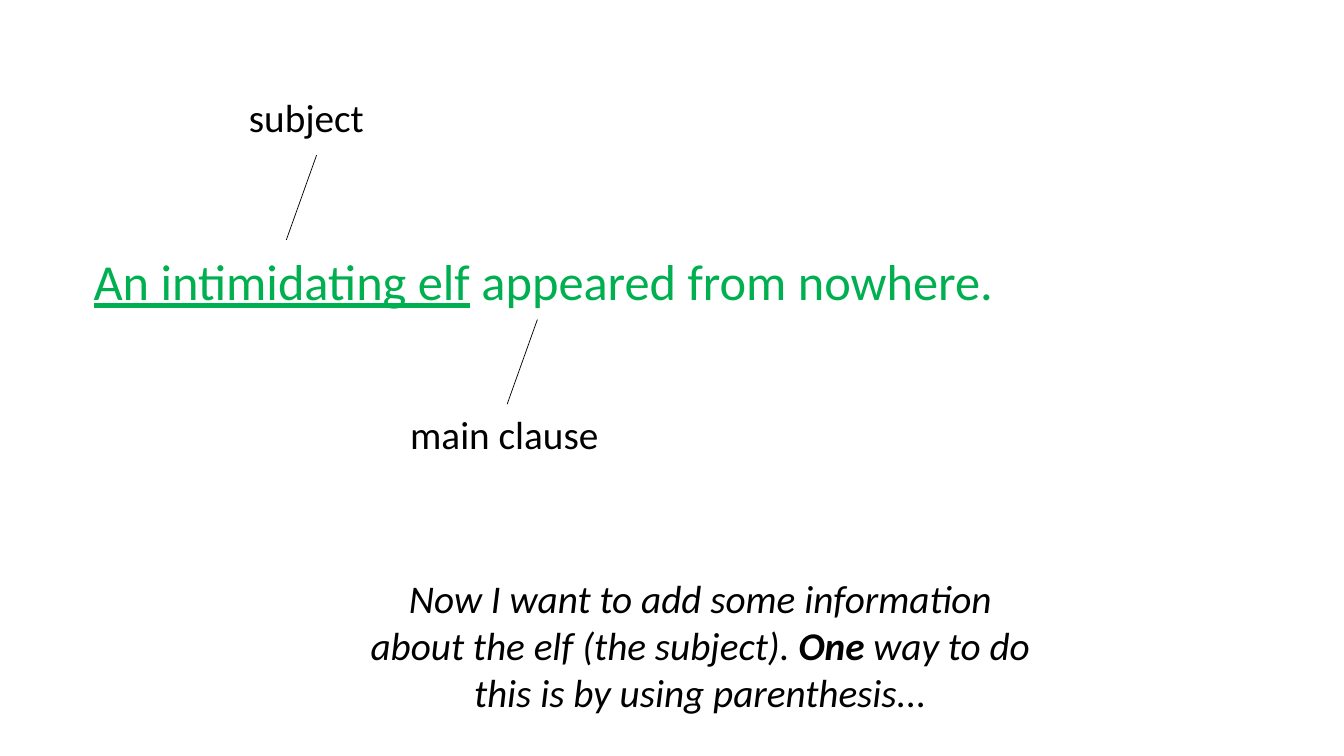
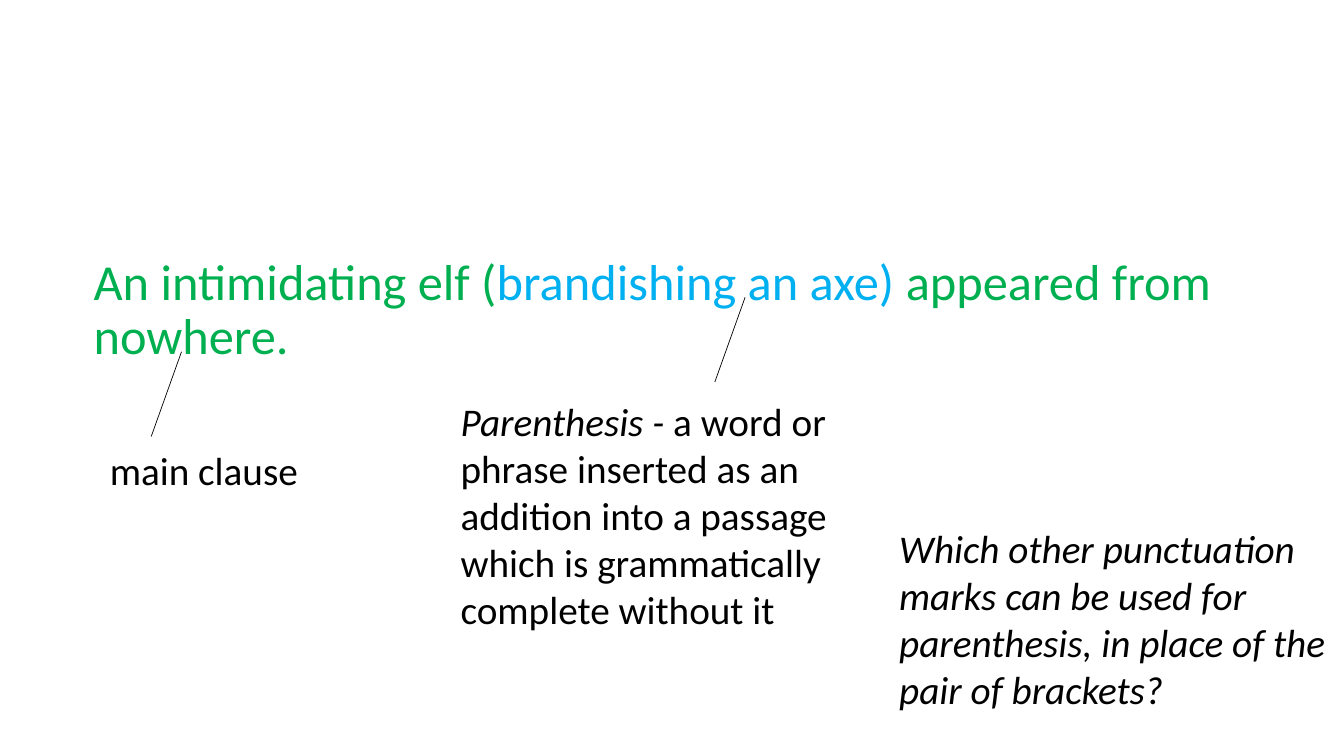
from pptx import Presentation
from pptx.dml.color import RGBColor
from pptx.enum.shapes import MSO_CONNECTOR
from pptx.enum.text import PP_ALIGN
from pptx.oxml.ns import qn
from pptx.util import Pt
from lxml.etree import SubElement

PX = 9144  # EMU per px, 100 px to the inch
FONT = "Calibri"
BLACK = RGBColor(0x00, 0x00, 0x00)
GREEN = RGBColor(0x00, 0xB0, 0x50)
BLUE = RGBColor(0x00, 0xB0, 0xF0)

SENTENCE_BOX = (83, 250, 1150, 295)
POINTER_RUN, POINTER_RISE = 30, 84


def add_text(s, box, runs, size=28, color=BLACK, italic=None, align=PP_ALIGN.LEFT):
    """Place one paragraph; runs are (text, font settings) pairs."""
    tb = s.shapes.add_textbox(*(v * PX for v in box))
    tf = tb.text_frame
    tf.word_wrap = True
    p = tf.paragraphs[0]
    p.alignment = align
    p.font.name, p.font.size, p.font.italic = FONT, Pt(size), italic
    p.font.color.rgb = color
    for text, settings in runs:
        r = p.add_run()
        r.text = text
        for name, value in settings.items():
            if name == "color":
                r.font.color.rgb = value
            else:
                setattr(r.font, name, value)
    return p


def add_sentence(s, runs):
    """The large green example sentence."""
    p = add_text(s, SENTENCE_BOX, runs, size=36, color=GREEN)
    p.line_spacing = 0.9


def add_pointer(s, x, y):
    """Thin slanted line rising to the right from its lower end."""
    line = s.shapes.add_connector(
        MSO_CONNECTOR.STRAIGHT, x * PX, y * PX,
        (x + POINTER_RUN) * PX, (y - POINTER_RISE) * PX)
    line.line.color.rgb = BLACK
    line.line.width = Pt(0.5)
    SubElement(line._element.spPr, qn("a:effectLst"))


def build_clause_slide(s):
    # Sentence with its subject underlined
    add_sentence(s, [("An intimidating elf", {"underline": True}),
                     (" appeared from nowhere.", {})])
    # Labels and pointers
    add_text(s, (237, 88, 249, 57), [("subject", {})])
    add_pointer(s, 284, 238)
    add_text(s, (397, 402, 249, 57), [("main clause", {})])
    add_pointer(s, 503, 401)
    # Lead-in to parenthesis
    add_text(s, (351, 565, 687, 151),
             [("Now I want to add some information about the elf (the subject). ", {}),
              ("One", {"bold": True}),
              (" way to do this is by using parenthesis...", {})],
             italic=True, align=PP_ALIGN.CENTER)


def build_parenthesis_slide(s):
    # Sentence with the parenthesis in blue
    add_sentence(s, [("An intimidating elf (", {}),
                     ("brandishing an axe)", {"color": BLUE}),
                     (" appeared from nowhere.", {})])
    # Labels and pointers
    add_text(s, (99, 438, 218, 57), [("main clause", {})])
    add_pointer(s, 150, 433)
    add_text(s, (447, 389, 452, 246),
             [("Parenthesis - ", {"italic": True}),
              ("a word or phrase inserted as an addition into a passage "
               "which is grammatically complete without it", {})])
    add_pointer(s, 709, 379)
    # Question
    add_text(s, (882, 515, 452, 199),
             [("Which other punctuation marks can be used for parenthesis, "
               "in place of the pair of brackets?", {})], italic=True)


def main():
    prs = Presentation()
    prs.slide_width, prs.slide_height = 1333 * PX, 750 * PX
    for build in (build_clause_slide, build_parenthesis_slide):
        build(prs.slides.add_slide(prs.slide_layouts[6]))
    prs.save("out.pptx")


if __name__ == "__main__":
    main()
